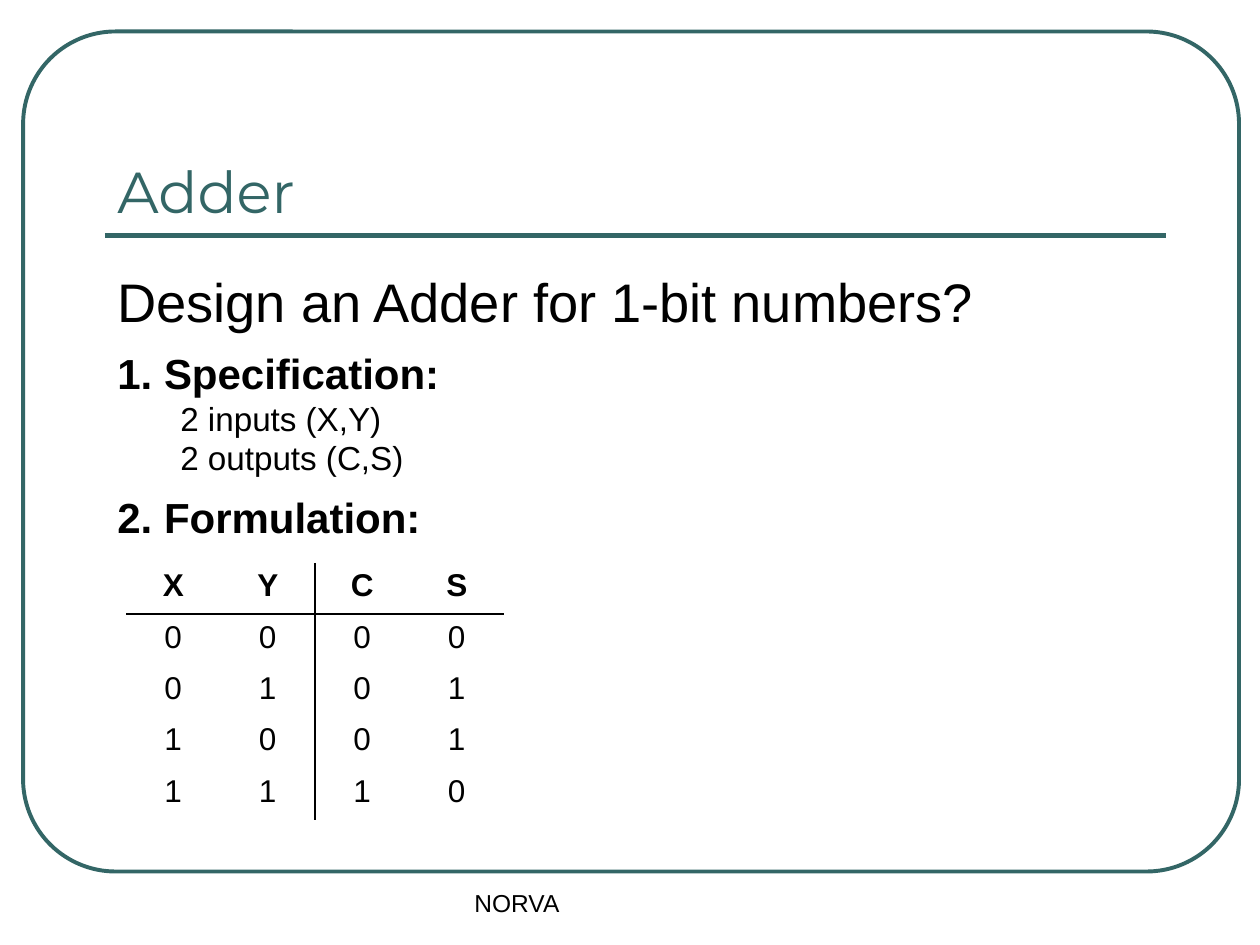
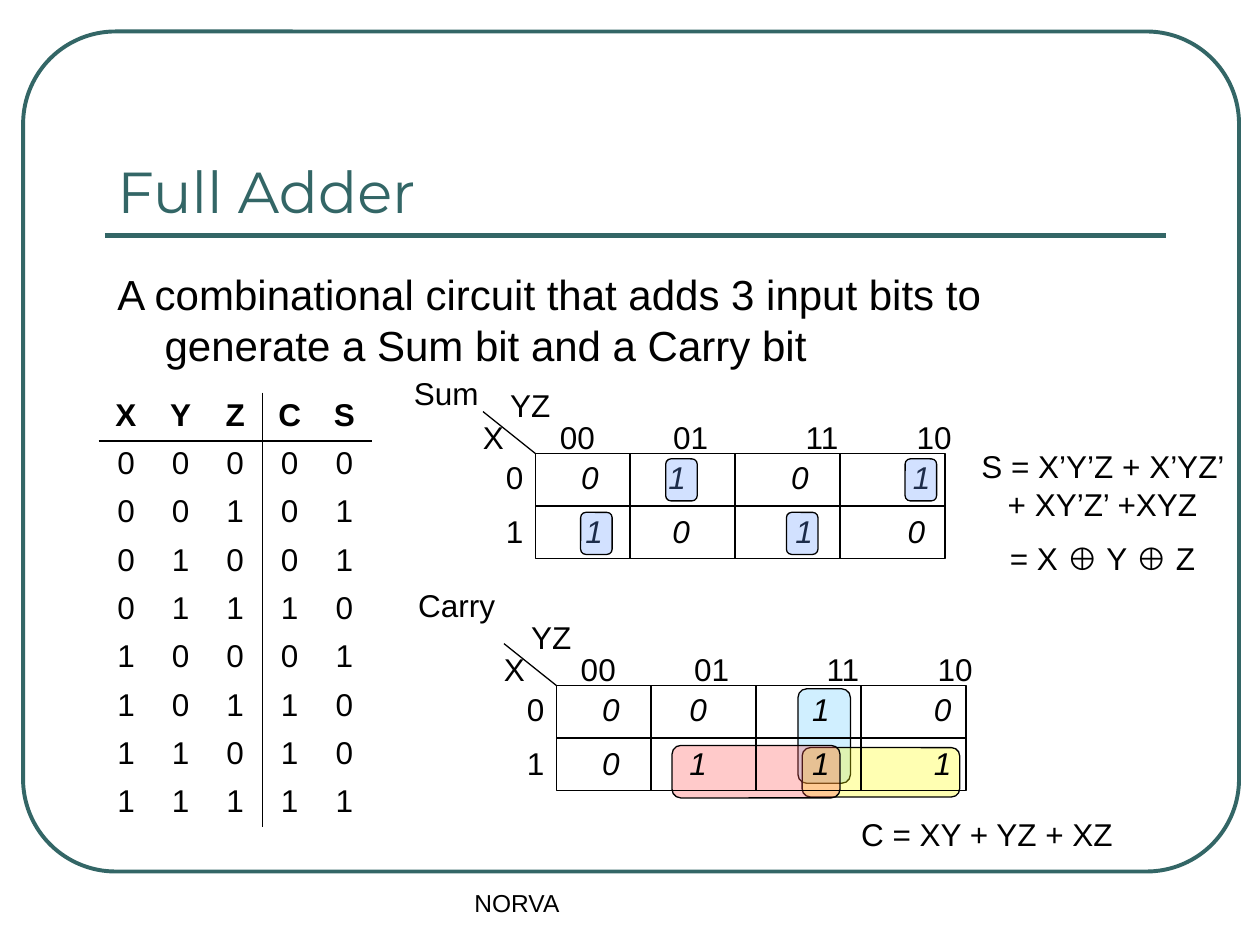
"""Build two slides on binary adders, with truth tables and Karnaugh maps."""
from dataclasses import dataclass

from lxml.etree import SubElement
from pptx import Presentation
from pptx.dml.color import RGBColor
from pptx.enum.shapes import MSO_CONNECTOR, MSO_SHAPE
from pptx.enum.text import MSO_ANCHOR, PP_ALIGN
from pptx.oxml.ns import qn
from pptx.util import Pt

EMU_PER_PX = 7620
TEAL, BLACK, WHITE = "336666", "000000", "FFFFFF"
SKY, YELLOW, RED, BLUE = "66CCFF", "FFFF00", "FF5050", "6699FF"
TITLE_FONT, TEXT_FONT = "Montserrat", "Arial"
FOOTER_TEXT = "NORVA"
HEADER_TABS = (28, 136, 261, 368)
CELL_TABS = (10, 93, 210, 326)
SHIFTED_TABS = (14, 97, 214, 321)


@dataclass(frozen=True)
class Area:
    left: int
    top: int
    width: int
    height: int

    def moved(self, x: int, y: int) -> "Area":
        return Area(self.left + x, self.top + y, self.width, self.height)


@dataclass(frozen=True)
class Line:
    text: str
    size: int = 18
    color: str = BLACK
    font: str = TEXT_FONT
    bold: bool = False
    italic: bool = False
    align: PP_ALIGN = PP_ALIGN.LEFT
    before: float = 0
    hang: int = 0
    detail_size: int = 0
    tabs: tuple[int, ...] = ()


@dataclass(frozen=True)
class Loop:
    area: Area
    color: str
    opacity: int = 30


@dataclass(frozen=True)
class TruthTable:
    left: int
    top: int
    column_width: int
    row_height: int
    inputs: int
    rows: tuple[str, ...]


@dataclass(frozen=True)
class KarnaughMap:
    name: str
    name_area: Area
    left: int
    top: int
    rows: tuple[str, str]
    row_tabs: tuple[tuple[int, ...], tuple[int, ...]]


FRAME = Area(22, 30, 1158, 800)
TITLE = Area(100, 70, 1010, 150)
BODY = Area(100, 250, 1010, 530)
FOOTER = Area(440, 840, 380, 60)

HALF_ADDER_TABLE = TruthTable(120, 536, 90, 49, 2, ("XYCS", "0000", "0101", "1001", "1110"))
FULL_ADDER_TABLE = TruthTable(
    94, 374, 52, 40, 3,
    ("XYZCS", "00000", "00101", "01001", "01110", "10001", "10110", "11010", "11111"),
)
MAPS = (
    KarnaughMap("Sum", Area(370, 350, 110, 50), 510, 432,
                ("0101", "1010"), (CELL_TABS, SHIFTED_TABS)),
    KarnaughMap("Carry", Area(380, 552, 110, 48), 530, 653,
                ("0010", "0111"), (CELL_TABS, CELL_TABS)),
)
CARRY_LOOPS = (
    Loop(Area(760, 656, 50, 90), SKY),
    Loop(Area(764, 712, 150, 47), YELLOW),
    Loop(Area(640, 710, 160, 50), RED),
)
SUM_LOOPS = tuple(
    Loop(Area(left, top, 30, 40), BLUE, 29)
    for left, top in ((862, 437), (634, 437), (749, 488), (553, 488))
)


def px(length: int) -> int:
    """Turn pixels into EMU."""
    return length * EMU_PER_PX


def rgb(color: str) -> RGBColor:
    """Turn a hex string into a colour."""
    return RGBColor.from_string(color)


def bounds(area: Area) -> tuple[int, int, int, int]:
    """Give an area's place and size in EMU."""
    return px(area.left), px(area.top), px(area.width), px(area.height)


def format_paragraph(para, line: Line) -> None:
    """Write a line into a paragraph and format it."""
    para.text = line.text
    para.alignment = line.align
    if line.before:
        para.space_before = Pt(line.before)
    properties = para._p.get_or_add_pPr()
    if line.hang:
        properties.set("marL", str(px(line.hang)))
        properties.set("indent", str(-px(line.hang)))
    if line.tabs:
        stops = SubElement(properties, qn("a:tabLst"))
        for tab in line.tabs:
            SubElement(stops, qn("a:tab"), pos=str(px(tab)), algn="ctr")
    for index, span in enumerate(para.runs):
        is_detail = line.detail_size and index > 0
        span.font.name = line.font
        span.font.size = Pt(line.detail_size if is_detail else line.size)
        span.font.bold = line.bold and not is_detail
        span.font.italic = line.italic
        span.font.color.rgb = rgb(line.color)


def add_text(page, area: Area, *lines: Line, anchor: MSO_ANCHOR = MSO_ANCHOR.TOP) -> None:
    """Add a wrapping text box."""
    frame = page.shapes.add_textbox(*bounds(area)).text_frame
    frame.word_wrap = True
    frame.vertical_anchor = anchor
    for index, line in enumerate(lines):
        para = frame.add_paragraph() if index else frame.paragraphs[0]
        format_paragraph(para, line)


def add_label(page, area: Area, *texts: str) -> None:
    """Add centred text with a gap between its paragraphs."""
    add_text(page, area, *(Line(text, align=PP_ALIGN.CENTER, before=9.5 if index else 0)
                           for index, text in enumerate(texts)))


def add_outline(page, kind: MSO_SHAPE, area: Area, color: str, weight: float):
    """Add an unfilled outlined shape."""
    shape = page.shapes.add_shape(kind, *bounds(area))
    shape.shadow.inherit = False
    shape.fill.background()
    shape.line.color.rgb = rgb(color)
    shape.line.width = Pt(weight)
    return shape


def add_line(page, start: tuple[int, int], end: tuple[int, int],
             color: str = BLACK, weight: float = 0.75) -> None:
    """Add a straight line."""
    connector = page.shapes.add_connector(
        MSO_CONNECTOR.STRAIGHT, *(px(value) for value in (*start, *end)))
    connector.line.color.rgb = rgb(color)
    connector.line.width = Pt(weight)
    SubElement(connector._element.spPr, qn("a:effectLst"))


def add_loop(page, loop: Loop) -> None:
    """Add a translucent loop around grouped cells."""
    shape = add_outline(page, MSO_SHAPE.ROUNDED_RECTANGLE, loop.area, BLACK, 0.75)
    shape.fill.solid()
    shape.fill.fore_color.rgb = rgb(loop.color)
    tint = shape._element.spPr.find(qn("a:solidFill")).find(qn("a:srgbClr"))
    SubElement(tint, qn("a:alpha"), val=str(loop.opacity * 1000))


def set_borders(cell, ruled: set[str]) -> None:
    """Rule the given sides of a cell and clear the others."""
    properties = cell._tc.get_or_add_tcPr()
    for side in "LRTB":
        border = SubElement(properties, qn(f"a:ln{side}"), w=str(Pt(1)))
        if side in ruled:
            fill = SubElement(border, qn("a:solidFill"))
            SubElement(fill, qn("a:srgbClr"), val=BLACK)
        else:
            SubElement(border, qn("a:noFill"))


def add_truth_table(page, truth: TruthTable) -> None:
    """Add a truth table ruled below its header and after its inputs."""
    row_count, column_count = len(truth.rows), len(truth.rows[0])
    area = Area(truth.left, truth.top,
                truth.column_width * column_count, truth.row_height * row_count)
    table = page.shapes.add_table(row_count, column_count, *bounds(area)).table
    table.first_row = table.horz_banding = False
    for row, values in enumerate(truth.rows):
        for column, value in enumerate(values):
            cell = table.cell(row, column)
            rules = {"B": row == 0, "T": row == 1,
                     "R": column == truth.inputs - 1, "L": column == truth.inputs}
            set_borders(cell, {side for side, ruled in rules.items() if ruled})
            cell.margin_top = cell.margin_bottom = px(5)
            cell.fill.solid()
            cell.fill.fore_color.rgb = rgb(WHITE)
            format_paragraph(cell.text_frame.paragraphs[0],
                             Line(value, bold=row == 0, align=PP_ALIGN.CENTER))


def tabbed(values) -> str:
    """Put a tab before each value."""
    return "".join(f"\t{value}" for value in values)


def add_karnaugh_map(page, chart: KarnaughMap) -> None:
    """Add a two by four Karnaugh map with its labels."""
    x, y = chart.left, chart.top
    add_outline(page, MSO_SHAPE.RECTANGLE, Area(x, y, 390, 100), BLACK, 0.75)
    add_line(page, (x, y + 50), (x + 390, y + 50))
    for offset in (90, 190, 290):
        add_line(page, (x + offset, y), (x + offset, y + 100))
    add_line(page, (x, y), (x - 50, y - 40))
    add_label(page, Area(-70, -40, 60, 48).moved(x, y), "X")
    add_label(page, Area(-40, -70, 70, 48).moved(x, y), "YZ")
    add_label(page, Area(-40, -2, 40, 102).moved(x, y), "0", "1")
    add_text(page, Area(0, -40, 420, 48).moved(x, y),
             Line(tabbed(("00", "01", "11", "10")), tabs=HEADER_TABS))
    add_text(page, Area(30, -2, 360, 102).moved(x, y),
             *(Line(tabbed(row), italic=True, tabs=tabs, before=9.5 if index else 0)
               for index, (row, tabs) in enumerate(zip(chart.rows, chart.row_tabs))))
    add_label(page, chart.name_area, chart.name)


def add_page(deck, title: str, *body: Line):
    """Add a framed page with its title, body and footer."""
    page = deck.slides.add_slide(deck.slide_layouts[6])
    frame = add_outline(page, MSO_SHAPE.ROUNDED_RECTANGLE, FRAME, TEAL, 2.25)
    frame.adjustments[0] = 0.11
    add_line(page, (100, 224), (1110, 224), TEAL, 3)
    add_text(page, TITLE, Line(title, 33, TEAL, TITLE_FONT), anchor=MSO_ANCHOR.BOTTOM)
    add_text(page, BODY, *body)
    add_text(page, FOOTER, Line(FOOTER_TEXT, 14))
    return page


def build_adder(deck) -> None:
    """Build the one-bit adder page."""
    page = add_page(
        deck, "Adder",
        Line("Design an Adder for 1-bit numbers?", 31, before=7.8, hang=45),
        Line("1. Specification:\v2 inputs (X,Y)\v2 outputs (C,S)", 24,
             bold=True, before=7.8, hang=60, detail_size=19),
        Line("2. Formulation:", 24, bold=True, before=7.8, hang=60),
    )
    add_truth_table(page, HALF_ADDER_TABLE)


def build_full_adder(deck) -> None:
    """Build the full adder page."""
    page = add_page(
        deck, "Full Adder",
        Line("A combinational circuit that adds 3 input bits to generate a Sum bit and a Carry bit",
             24, before=7.8, hang=45),
    )
    add_truth_table(page, FULL_ADDER_TABLE)
    for loop in CARRY_LOOPS:
        add_loop(page, loop)
    for chart in MAPS:
        add_karnaugh_map(page, chart)
    add_label(page, Area(920, 420, 260, 139), "S = X’Y’Z + X’YZ’ + XY’Z’ +XYZ", "= X ⊕ Y ⊕ Z")
    add_label(page, Area(760, 770, 360, 48), "C = XY + YZ + XZ")
    for loop in SUM_LOOPS:
        add_loop(page, loop)


def main() -> None:
    """Build and save the deck."""
    deck = Presentation()
    deck.slide_width, deck.slide_height = px(1200), px(900)
    build_adder(deck)
    build_full_adder(deck)
    deck.save("out.pptx")


if __name__ == "__main__":
    main()
